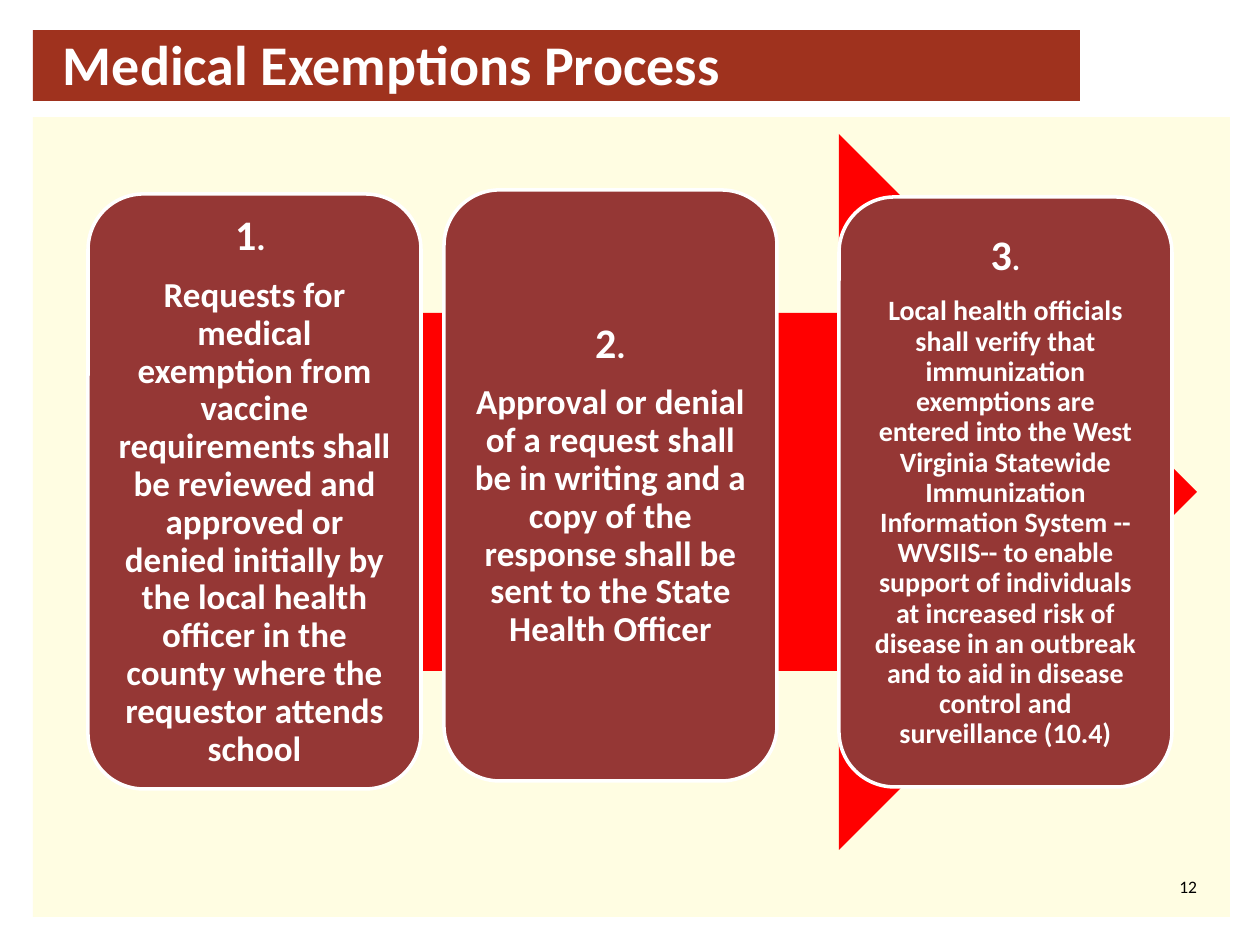
"""Build the medical exemptions process slide."""
from pptx import Presentation, util as u
from pptx.dml.color import RGBColor
from pptx.enum import shapes, text

PX = 914400 // 126
KIND = shapes.MSO_SHAPE
ALIGN = text.PP_ALIGN


def color(code):
    return RGBColor.from_string(code)


class Deck:
    font = "Calibri"
    white = "FFFFFF"
    card_fill = "953735"

    def __init__(self):
        self.prs = Presentation()
        self.prs.slide_width, self.prs.slide_height = u.Inches(10), u.Inches(7.5)
        self.slide = self.prs.slides.add_slide(self.prs.slide_layouts[6])

    def shape(self, kind, box, fill, line=None):
        item = self.slide.shapes.add_shape(kind, *(n * PX for n in box))
        item.shadow.inherit = False
        item.fill.solid()
        item.fill.fore_color.rgb = color(fill)
        if line:
            item.line.color.rgb = color(line)
            item.line.width = u.Pt(2)
        else:
            item.line.fill.background()
        return item

    def style(self, font, size, ink, bold):
        font.name, font.size, font.bold = self.font, u.Pt(size), bold
        font.color.rgb = color(ink)

    def label(self, box, words, size, ink, bold, align, anchor):
        frame = self.slide.shapes.add_textbox(*(n * PX for n in box)).text_frame
        frame.margin_left = frame.margin_right = 0
        frame.margin_top = frame.margin_bottom = 0
        frame.word_wrap = True
        frame.vertical_anchor = anchor
        para = frame.paragraphs[0]
        para.text, para.alignment = words, align
        self.style(para.font, size, ink, bold)

    def card(self, box, num, dot, dot_size, words, size):
        frame = self.shape(KIND.ROUNDED_RECTANGLE, box, self.card_fill, self.white).text_frame
        frame.word_wrap = True
        frame.vertical_anchor = text.MSO_ANCHOR.MIDDLE
        head, body = frame.paragraphs[0], frame.add_paragraph()
        for part, pt in ((num, 24), (dot, dot_size)):
            run = head.add_run()
            run.text = part
            self.style(run.font, pt, self.white, True)
        body.text = words
        body.space_before = u.Pt(10)
        self.style(body.font, size, self.white, True)
        for para in (head, body):
            para.alignment = ALIGN.CENTER
            para.line_spacing = 0.9


def main():
    deck = Deck()
    deck.shape(KIND.RECTANGLE, (33, 117, 1197, 800), "FFFDE2")
    deck.shape(KIND.RECTANGLE, (33, 30, 1047, 71), "9F321E")
    deck.label((63, 32, 1012, 63), "Medical Exemptions Process", 32, deck.white,
               True, ALIGN.LEFT, text.MSO_ANCHOR.MIDDLE)
    deck.shape(KIND.RIGHT_ARROW, (89, 134, 1108, 716), "FF0000")
    cards = (
        ((88, 194, 333, 595), "1", ". ", 20,
         "Requests for medical exemption from vaccine requirements shall be "
         "reviewed and approved or denied initially by the local health officer "
         "in the county where the requestor attends school", 20),
        ((444, 190, 333, 591), "2", ".", 20,
         "Approval or denial of a request shall be in writing and a copy of the "
         "response shall be sent to the State Health Officer", 20),
        ((839, 197, 333, 590), "3", ".", 18,
         "Local health officials shall verify that immunization exemptions are "
         "entered into the West Virginia Statewide Immunization Information "
         "System -- WVSIIS-- to enable support of individuals at increased risk "
         "of disease in an outbreak and to aid in disease control and "
         "surveillance (10.4)", 16),
    )
    for card in cards:
        deck.card(*card)
    deck.label((1149, 876, 48, 24), "12", 10, "000000", False,
               ALIGN.RIGHT, text.MSO_ANCHOR.TOP)
    deck.prs.save("out.pptx")


if __name__ == "__main__":
    main()
